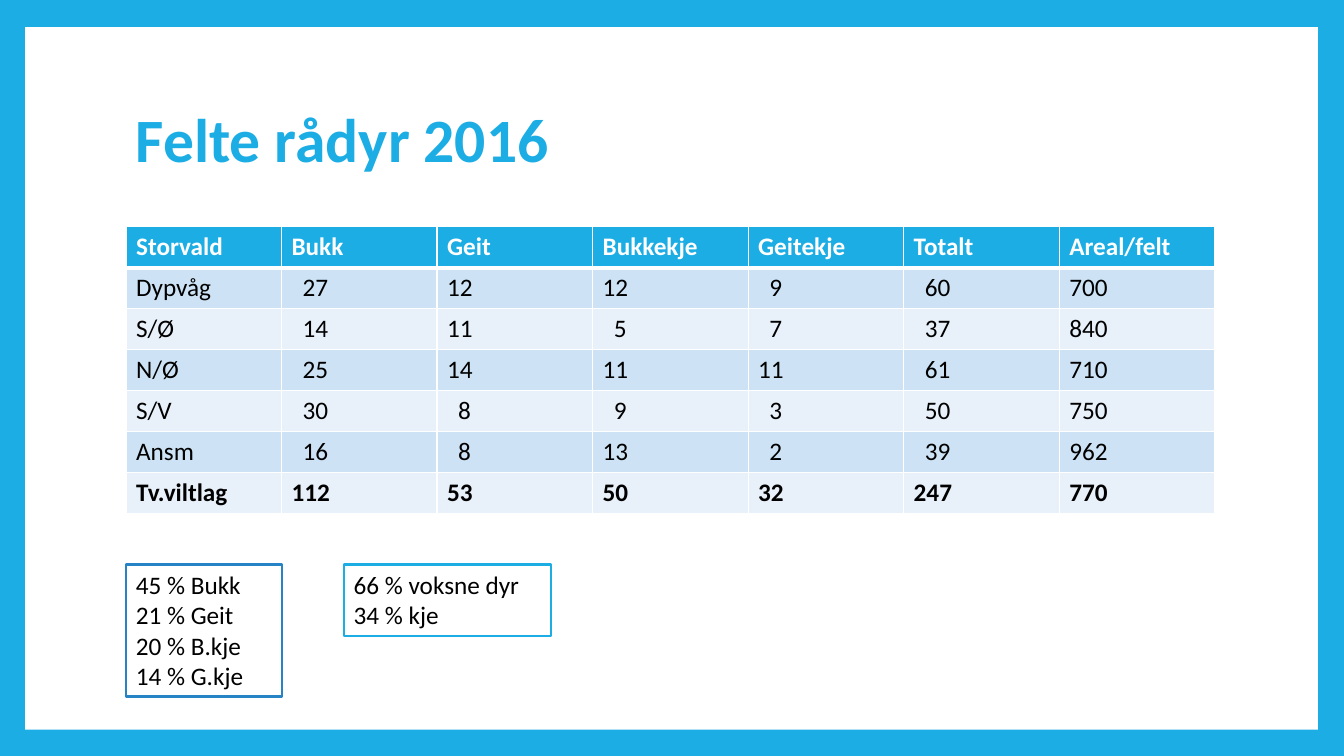
from pptx import Presentation
from pptx.dml.color import RGBColor
from pptx.enum.shapes import MSO_SHAPE
from pptx.enum.text import MSO_ANCHOR, MSO_AUTO_SIZE, PP_ALIGN
from pptx.oxml import parse_xml
from pptx.oxml.ns import nsdecls
from pptx.util import Inches, Pt

COLORS = {"sky": "1CADE4", "blue": "2683C6", "white": "FFFFFF",
          "black": "000000", "band": "CDE3F5", "pale": "E8F1FA"}

# Grid in inches: seven columns between equal side margins
LEFT, WIDE, ROW = 1.25, 10.8, 0.406
COL = WIDE / 7
DIGIT = 0.11  # indent that lines up shorter numbers


def style(frame, size, color, bold=False):
    for par in frame.paragraphs:
        par.alignment = PP_ALIGN.LEFT
        for run in par.runs:
            font = run.font
            font.name, font.size, font.bold = "Calibri", Pt(size), bold
            font.color.rgb = RGBColor.from_string(COLORS[color])


def add_box(left, top, width, height, line=None):
    box = slide.shapes.add_shape(MSO_SHAPE.RECTANGLE, Inches(left), Inches(top),
                                 Inches(width), Inches(height))
    box.shadow.inherit = False
    box.fill.solid()
    box.fill.fore_color.rgb = RGBColor.from_string(COLORS["white"])
    if line:
        box.line.color.rgb = RGBColor.from_string(COLORS[line])
        box.line.width = Pt(1.5)
    else:
        box.line.fill.background()
    return box


deck = Presentation()
deck.slide_width, deck.slide_height = Inches(13.33), Inches(7.5)
slide = deck.slides.add_slide(deck.slide_layouts[6])

# Blue frame around a white page
back = slide.background.fill
back.solid()
back.fore_color.rgb = RGBColor.from_string(COLORS["sky"])
add_box(0.25, 0.27, 12.82, 6.97)

# Title
title = slide.shapes.add_textbox(Inches(LEFT), Inches(0.67), Inches(WIDE), Inches(1.48))
frame = title.text_frame
frame.word_wrap = True
frame.vertical_anchor = MSO_ANCHOR.MIDDLE
frame.text = "Felte rådyr 2016"
frame.paragraphs[0].line_spacing = 0.9
style(frame, 44, "sky", True)

# Table of felled deer
rows = [
    ["Storvald", "Bukk", "Geit", "Bukkekje", "Geitekje", "Totalt", "Areal/felt"],
    ["Dypvåg", "27", "12", "12", "9", "60", "700"],
    ["S/Ø", "14", "11", "5", "7", "37", "840"],
    ["N/Ø", "25", "14", "11", "11", "61", "710"],
    ["S/V", "30", "8", "9", "3", "50", "750"],
    ["Ansm", "16", "8", "13", "2", "39", "962"],
    ["Tv.viltlag", "112", "53", "50", "32", "247", "770"],
]
last = len(rows) - 1
digits = [max(len(row[c]) for row in rows[1:]) for c in range(7)]
table = slide.shapes.add_table(7, 7, Inches(LEFT), Inches(2.25),
                               Inches(WIDE), Inches(7 * ROW)).table
for col in table.columns:
    col.width = Inches(COL)
for r, row in enumerate(rows):
    table.rows[r].height = Inches(ROW)
    fill = "sky" if r == 0 else "band" if r % 2 else "pale"
    for c, word in enumerate(row):
        cell = table.cell(r, c)
        cell.text = word
        style(cell.text_frame, 18, "black" if r else "white", r in (0, last))
        if r and c and len(word) < digits[c]:
            cell.margin_left = Inches(0.1 + DIGIT)
        # White rules, thicker under the header
        props = cell._tc.get_or_add_tcPr()
        for side in "LRTB":
            thick = (side == "B" and r == 0) or (side == "T" and r == 1)
            props.append(parse_xml(
                f'<a:ln{side} {nsdecls("a")} w="{Pt(3 if thick else 1)}"><a:solidFill>'
                f'<a:srgbClr val="{COLORS["white"]}"/></a:solidFill></a:ln{side}>'))
        cell.fill.solid()
        cell.fill.fore_color.rgb = RGBColor.from_string(COLORS[fill])

# Boxes with shares
notes = [
    (LEFT, COL, 1.31, "blue", ["45 % Bukk", "21 % Geit", "20 % B.kje", "14 % G.kje"]),
    (3.41, 2.06, 0.71, "sky", ["66 % voksne dyr", "34 % kje"]),
]
for left, width, height, line, lines in notes:
    frame = add_box(left, 5.6, width, height, line).text_frame
    frame.word_wrap = True
    frame.auto_size = MSO_AUTO_SIZE.SHAPE_TO_FIT_TEXT
    frame.vertical_anchor = MSO_ANCHOR.TOP
    frame.text = "\n".join(lines)
    style(frame, 18, "black")

deck.save("out.pptx")
